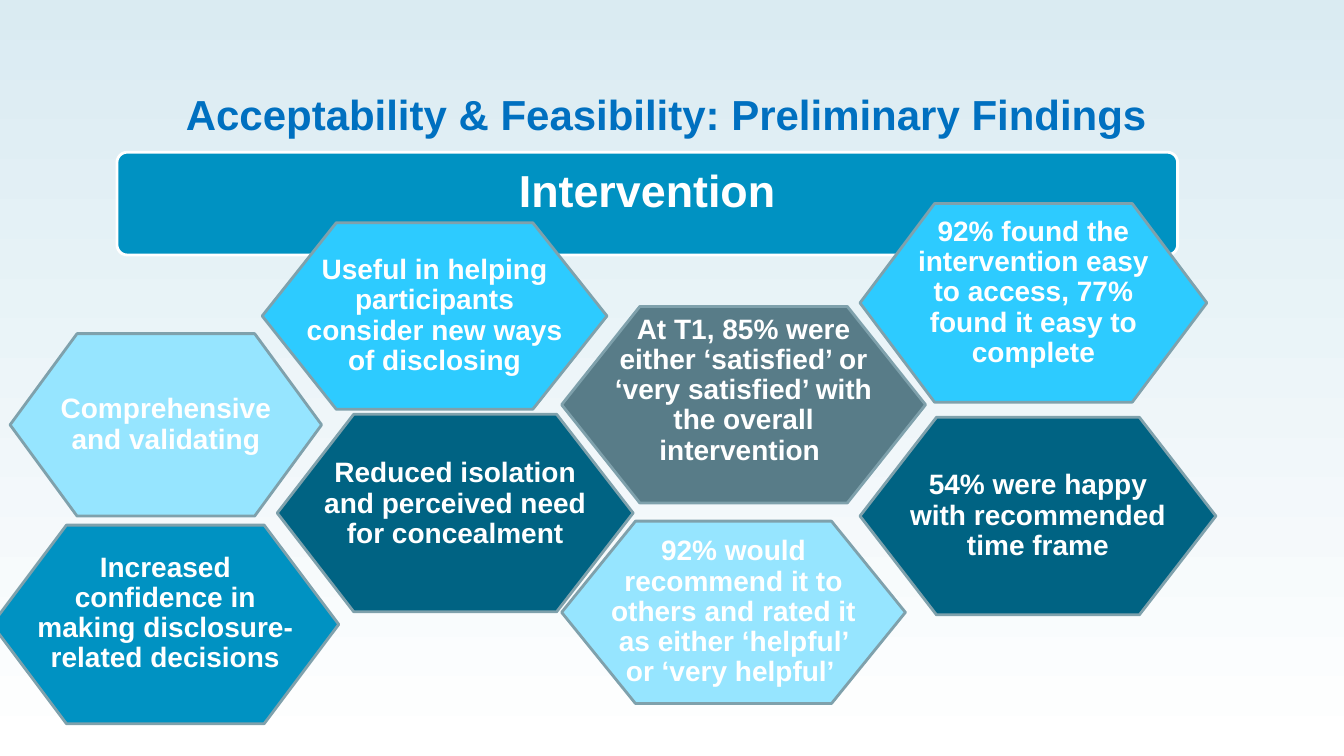
import pptx
import pptx.util
from pptx.dml.color import RGBColor
from pptx.enum.shapes import MSO_SHAPE
from pptx.enum.text import MSO_ANCHOR, PP_ALIGN
from pptx.util import Inches, Pt

WHITE = RGBColor(0xFF, 0xFF, 0xFF)
PALE_BLUE = RGBColor(0xDA, 0xEB, 0xF2)
TITLE_BLUE = RGBColor(0x00, 0x70, 0xC0)
BLUE = RGBColor(0x00, 0x92, 0xC2)
BRIGHT = RGBColor(0x2D, 0xCB, 0xFF)
NAVY = RGBColor(0x00, 0x63, 0x83)
LIGHT = RGBColor(0x96, 0xE5, 0xFF)
SLATE = RGBColor(0x58, 0x7C, 0x88)
OUTLINE = RGBColor(0x7F, 0xA1, 0xAC)

TITLE = "Acceptability & Feasibility: Preliminary Findings "
BANNER = "Intervention"

# text, fill, (left, top, width, height), rise of the text above the middle
FINDINGS = [
    ("Useful in helping participants consider new ways of disclosing",
     BRIGHT, (2.6, 2.21, 3.42, 1.85), 0),
    ("Reduced isolation and perceived need for concealment",
     NAVY, (2.75, 4.11, 3.53, 1.96), 0.09),
    ("Comprehensive and validating",
     LIGHT, (0.1, 3.31, 3.09, 1.81), 0),
    ("At T1, 85% were either ‘satisfied’ or ‘very satisfied’ with the overall intervention ",
     SLATE, (5.57, 3.04, 3.61, 1.95), 0.14),
    ("Increased confidence in making disclosure-related decisions",
     BLUE, (-0.08, 5.21, 3.44, 1.97), 0.11),
    ("92% would recommend it to others and rated it as either ‘helpful’ or ‘very helpful’ ",
     LIGHT, (5.57, 5.17, 3.41, 1.81), 0),
    ("92% found the intervention easy to access, 77% found it easy to complete",
     BRIGHT, (8.53, 2.02, 3.44, 1.97), 0.1),
    ("54% were happy with recommended time frame",
     NAVY, (8.53, 4.14, 3.53, 1.96), 0),
]
SHOULDER = 0.215  # share of a hexagon's width taken by each slanted end


def write(shape, text, size, color=WHITE, anchor=MSO_ANCHOR.MIDDLE,
          margins=(0.1, 0.05, 0.1, 0.05), line_spacing=1.0):
    frame = shape.text_frame
    frame.word_wrap = True
    frame.vertical_anchor = anchor
    (frame.margin_left, frame.margin_top,
     frame.margin_right, frame.margin_bottom) = map(Inches, margins)
    paragraph = frame.paragraphs[0]
    paragraph.alignment = PP_ALIGN.CENTER
    paragraph.line_spacing = line_spacing
    run = paragraph.add_run()
    run.text = text
    run.font.name = "Arial"
    run.font.size = Pt(size)
    run.font.bold = True
    run.font.color.rgb = color


def paint(shape, fill, line):
    shape.shadow.inherit = False
    shape.fill.solid()
    shape.fill.fore_color.rgb = fill
    shape.line.color.rgb = line
    shape.line.width = Pt(2)


def add_hexagon(slide, left, top, width, height):
    right, middle, bottom = left + width, top + height / 2, top + height
    inner_left, inner_right = left + SHOULDER * width, right - SHOULDER * width
    corners = [(inner_left, top), (inner_right, top), (right, middle),
               (inner_right, bottom), (inner_left, bottom)]
    builder = slide.shapes.build_freeform(Inches(left), Inches(middle))
    builder.add_line_segments([(Inches(x), Inches(y)) for x, y in corners], close=True)
    return builder.convert_to_shape()


def main():
    presentation = pptx.Presentation()
    presentation.slide_width = Inches(13.33)
    presentation.slide_height = Inches(7.5)
    slide = presentation.slides.add_slide(presentation.slide_layouts[6])

    background = slide.background.fill
    background.gradient()
    background.gradient_angle = 270
    for stop, color in zip(background.gradient_stops, (PALE_BLUE, WHITE)):
        stop.color.rgb = color

    banner = slide.shapes.add_shape(
        MSO_SHAPE.ROUNDED_RECTANGLE, *map(Inches, (1.16, 1.51, 10.52, 1.02)))
    banner.adjustments[0] = 0.1
    paint(banner, BLUE, WHITE)
    write(banner, BANNER, 32, anchor=MSO_ANCHOR.TOP, margins=(0.1, 0.07, 0.1, 0.05))

    title = slide.shapes.add_textbox(*map(Inches, (0.48, 0.82, 12.38, 0.61)))
    write(title, TITLE, 30, color=TITLE_BLUE)

    for text, fill, box, rise in FINDINGS:
        hexagon = add_hexagon(slide, *box)
        paint(hexagon, fill, OUTLINE)
        write(hexagon, text, 20, line_spacing=0.9,
              margins=(0.43, 0.05, 0.43, 0.05 + 2 * rise))

    presentation.save("out.pptx")


if __name__ == "__main__":
    main()
